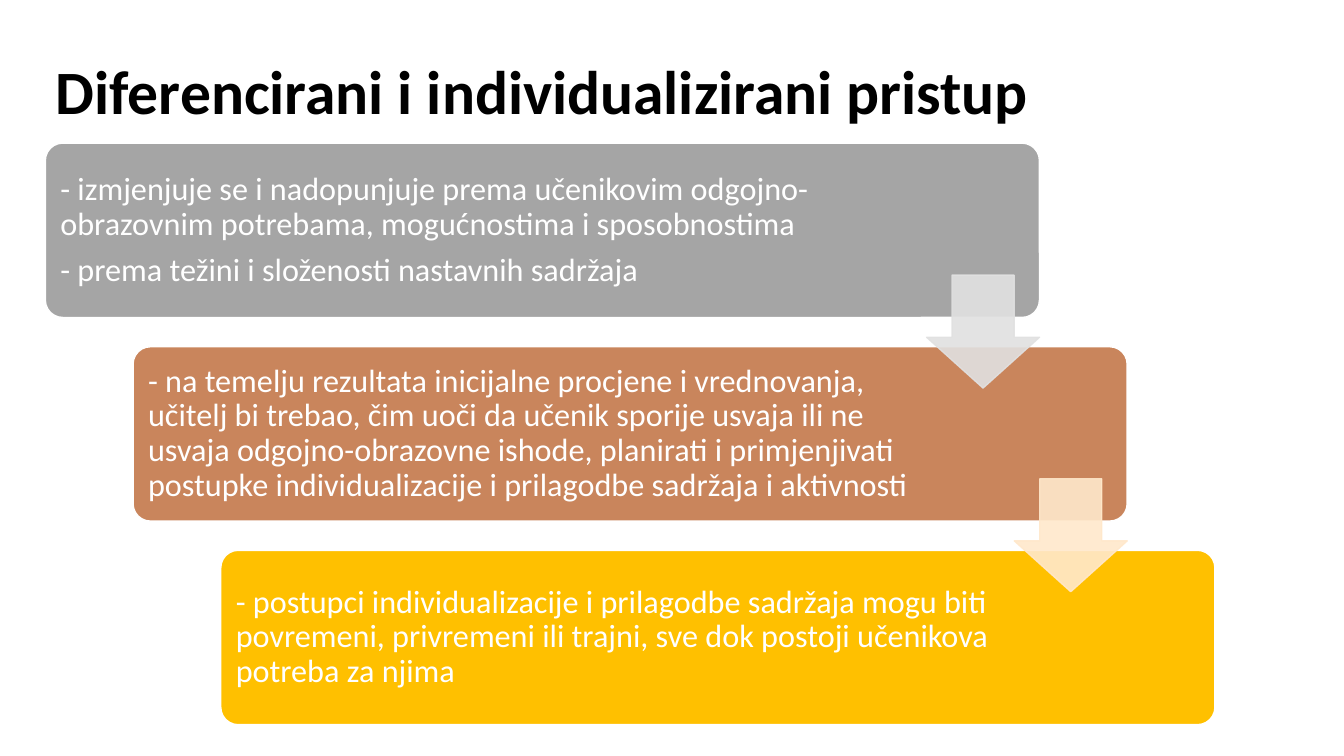
from dataclasses import dataclass

from lxml.etree import SubElement
from pptx import Presentation
from pptx.dml.color import RGBColor
from pptx.enum.shapes import MSO_SHAPE as Kind
from pptx.enum.text import MSO_ANCHOR as Anchor, PP_ALIGN as Align
from pptx.oxml.ns import qn
from pptx.util import Inches, Pt

# Staircase of steps: first corner, offset to the next, box size
LEFT, TOP = 0.45, 1.42
DX, DY = 0.87, 2.02
WIDE, HIGH = 9.86, 1.73
ARROW = 1.12
PAD = 0.1


@dataclass
class Step:
    lines: list[str]
    fill: str
    right: float  # right text margin
    arrow: str = ""  # colour of the arrow to the next step


STEPS = [
    Step(["- izmjenjuje se i nadopunjuje prema učenikovim odgojno-obrazovnim "
          "potrebama, mogućnostima i sposobnostima",
          "- prema težini i složenosti nastavnih sadržaja"],
         "A5A5A5", 1.87, "E1E1E1"),
    Step(["- na temelju rezultata inicijalne procjene i vrednovanja, učitelj bi "
          "trebao, čim uoči da učenik sporije usvaja ili ne usvaja "
          "odgojno-obrazovne ishode, planirati i primjenjivati postupke "
          "individualizacije i prilagodbe sadržaja i aktivnosti"],
         "C9855C", 2.1, "FFE8CB"),
    Step(["- postupci individualizacije i prilagodbe sadržaja mogu biti povremeni, "
          "privremeni ili trajni, sve dok postoji učenikova potreba za njima"],
         "FFC000", 2.1),
]


def paint(part, color: str, alpha: int = 100) -> None:
    """Give a fill a solid colour, alpha in percent."""
    part.solid()
    part.fore_color.rgb = RGBColor.from_string(color)
    if alpha < 100:
        for node in part._xPr.iter(qn("a:srgbClr")):
            if node.getparent().getparent() is part._xPr:
                SubElement(node, qn("a:alpha"), val=str(alpha * 1000))


def write(frame, lines: list[str], *, size: float, color: str,
          bold: bool = False, gap: float = 0, right: float = PAD) -> None:
    frame.word_wrap = True
    frame.vertical_anchor = Anchor.MIDDLE
    frame.margin_left = Inches(PAD)
    frame.margin_right = Inches(right)
    for i, line in enumerate(lines):
        para = frame.paragraphs[0] if i == 0 else frame.add_paragraph()
        para.alignment = Align.LEFT
        para.line_spacing = 0.9
        para.space_before = Pt(gap if i else 0)
        run = para.add_run()
        run.text = line
        font = run.font
        font.name, font.size, font.bold = "Calibri", Pt(size), bold
        font.color.rgb = RGBColor.from_string(color)


def draw(slide, kind: Kind, box: tuple, adjust: list[float], fill: str,
         line: str, alpha: int = 100):
    shape = slide.shapes.add_shape(kind, *map(Inches, box))
    shape.shadow.inherit = False
    for i, value in enumerate(adjust):
        shape.adjustments[i] = value
    paint(shape.fill, fill, alpha)
    shape.line.width = Pt(1)
    paint(shape.line.fill, line, alpha)
    return shape


def main() -> None:
    deck = Presentation()
    deck.slide_width, deck.slide_height = Inches(13.33), Inches(7.5)
    slide = deck.slides.add_slide(deck.slide_layouts[5])

    # Title
    title = slide.shapes.title
    title.left, title.top = Inches(LEFT), Inches(0.46)
    title.width, title.height = Inches(11.5), Inches(0.96)
    write(title.text_frame, ["Diferencirani i individualizirani pristup"],
          size=44, color="000000", bold=True)

    # Steps
    for i, step in enumerate(STEPS):
        box = (LEFT + i * DX, TOP + i * DY, WIDE, HIGH)
        shape = draw(slide, Kind.ROUNDED_RECTANGLE, box, [0.1],
                     step.fill, "FFFFFF")
        write(shape.text_frame, step.lines, size=23, color="FFFFFF",
              gap=8, right=step.right)

    # Arrows between steps, flush with the right edge of the upper box
    for i, step in enumerate(STEPS):
        if step.arrow:
            box = (LEFT + WIDE - ARROW + i * DX, 2.73 + i * DY, ARROW, ARROW)
            draw(slide, Kind.DOWN_ARROW, box, [0.55, 0.45],
                 step.arrow, step.arrow, alpha=90)

    deck.save("out.pptx")


if __name__ == "__main__":
    main()
